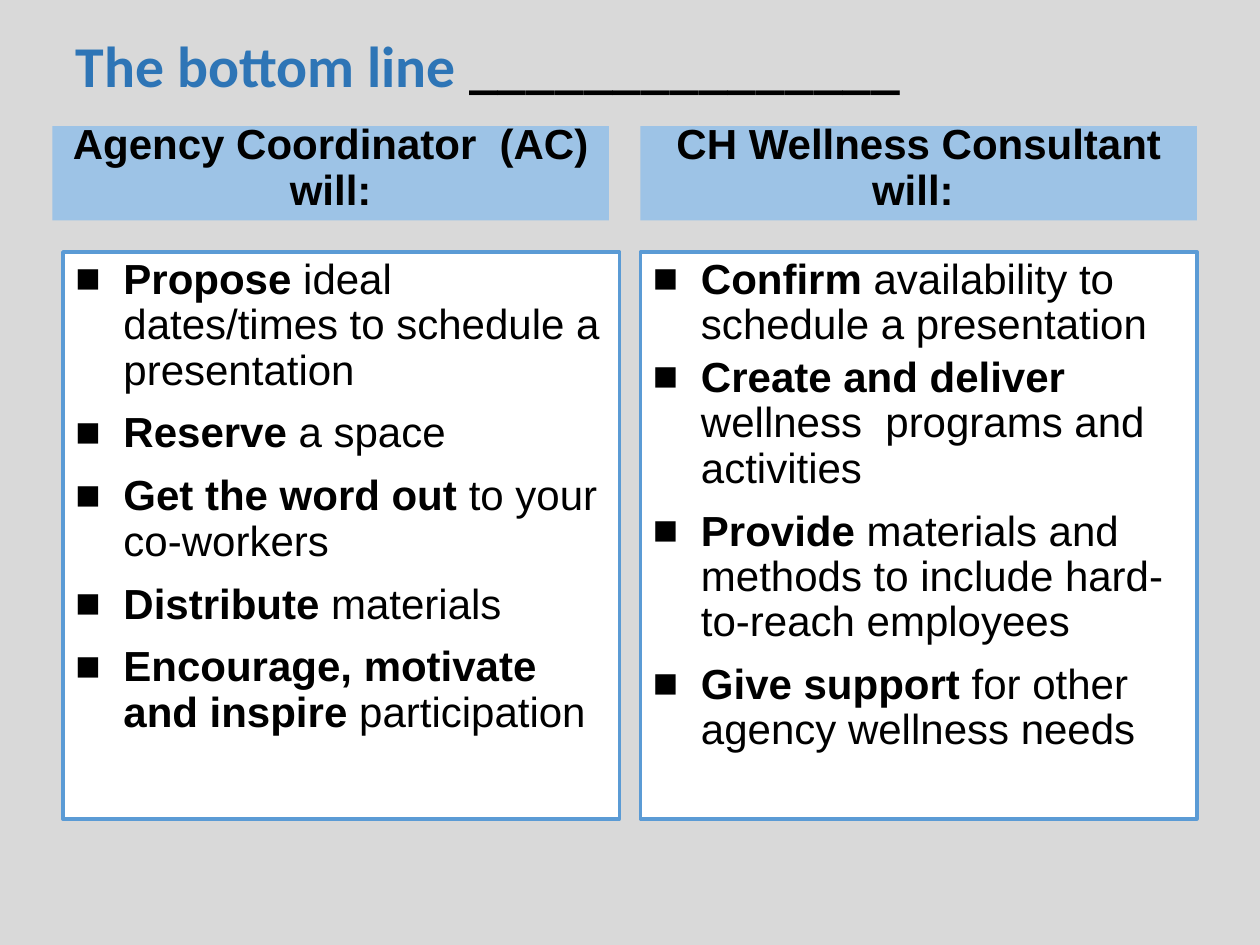
import pptx
import pptx.dml.color
import pptx.enum.shapes
import pptx.enum.text
import pptx.oxml
import pptx.oxml.ns
import pptx.util

Pt = pptx.util.Pt
RGBColor = pptx.dml.color.RGBColor
ALIGN = pptx.enum.text.PP_ALIGN
ANCHOR = pptx.enum.text.MSO_ANCHOR

GREY = RGBColor(0xD9, 0xD9, 0xD9)
BLACK = RGBColor(0, 0, 0)
WHITE = RGBColor(0xFF, 0xFF, 0xFF)
TITLE_BLUE = RGBColor(0x2E, 0x75, 0xB6)
HEADER_BLUE = RGBColor(0x9D, 0xC3, 0xE6)
BORDER_BLUE = RGBColor(0x5B, 0x9B, 0xD5)

COLUMN_WIDTH = 318
BULLET_INDENT = 27.5

# Each bullet: bold lead, plain remainder, space before in points.
COLUMNS = [
    {
        "header": "Agency Coordinator  (AC) will:",
        "header_left": 30,
        "list_left": 36,
        "bullets": [
            ("Propose ", "ideal dates/times to schedule a presentation", 0),
            ("Reserve", " a space", 10),
            ("Get the word out", " to your co-workers", 10),
            ("Distribute", " materials", 10),
            ("Encourage, motivate and inspire ", "participation", 10),
        ],
    },
    {
        "header": "CH Wellness Consultant will: ",
        "header_left": 366,
        "list_left": 366,
        "bullets": [
            ("Confirm ", "availability to schedule a presentation", 4.2),
            ("Create and deliver ", "wellness  programs and activities", 4.2),
            ("Provide ", "materials and methods to include hard-to-reach employees", 10),
            ("Give support ", "for other agency wellness needs", 10),
        ],
    },
]


def add_text(para, text, size=24, font="Arial", color=BLACK, bold=False):
    span = para.add_run()
    span.text = text
    span.font.size = Pt(size)
    span.font.name = font
    span.font.color.rgb = color
    span.font.bold = bold


def format_frame(frame, anchor):
    frame.word_wrap = True
    frame.auto_size = pptx.enum.text.MSO_AUTO_SIZE.NONE
    frame.vertical_anchor = anchor
    frame.margin_left = frame.margin_right = Pt(7.2)
    frame.margin_top = frame.margin_bottom = Pt(3.6)


def format_paragraph(para, align=ALIGN.LEFT, space_before=0):
    para.alignment = align
    para.line_spacing = 0.9
    para.space_before = Pt(space_before)


def add_bullet(para):
    properties = para._p.get_or_add_pPr()
    properties.set("marL", str(Pt(BULLET_INDENT)))
    properties.set("indent", str(-Pt(BULLET_INDENT)))
    namespace = pptx.oxml.ns.nsdecls("a")
    for markup in ('<a:buFont {} typeface="Arial"/>', '<a:buChar {} char="■"/>'):
        properties.append(pptx.oxml.parse_xml(markup.format(namespace)))


def add_box(page, left, top, height, fill, anchor, border=None):
    box = page.shapes.add_shape(
        pptx.enum.shapes.MSO_SHAPE.RECTANGLE,
        Pt(left), Pt(top), Pt(COLUMN_WIDTH), Pt(height))
    box.shadow.inherit = False
    box.fill.solid()
    box.fill.fore_color.rgb = fill
    if border is None:
        box.line.fill.background()
    else:
        box.line.color.rgb = border
        box.line.width = Pt(2)
    format_frame(box.text_frame, anchor)
    return box


def add_title(page):
    title = page.shapes.title
    title.left, title.top, title.width, title.height = Pt(36), Pt(18), Pt(648), Pt(72)
    format_frame(title.text_frame, ANCHOR.TOP)
    para = title.text_frame.paragraphs[0]
    format_paragraph(para)
    add_text(para, "The bottom line ", size=33, font="Calibri", color=TITLE_BLUE, bold=True)
    add_text(para, "_" * 15, size=33, font="Calibri", bold=True)


def add_header(page, left, text):
    box = add_box(page, left, 72, 54, HEADER_BLUE, ANCHOR.BOTTOM)
    para = box.text_frame.paragraphs[0]
    format_paragraph(para, align=ALIGN.CENTER)
    add_text(para, text, bold=True)


def add_bullet_list(page, left, bullets):
    box = add_box(page, left, 144, 324, WHITE, ANCHOR.TOP, border=BORDER_BLUE)
    frame = box.text_frame
    for index, (lead, remainder, space_before) in enumerate(bullets):
        para = frame.add_paragraph() if index else frame.paragraphs[0]
        format_paragraph(para, space_before=space_before)
        add_bullet(para)
        add_text(para, lead, bold=True)
        add_text(para, remainder)


def main():
    deck = pptx.Presentation()
    deck.slide_width, deck.slide_height = Pt(720), Pt(540)
    page = deck.slides.add_slide(deck.slide_layouts.get_by_name("Title Only"))
    page.background.fill.solid()
    page.background.fill.fore_color.rgb = GREY
    add_title(page)
    for column in COLUMNS:
        add_header(page, column["header_left"], column["header"])
        add_bullet_list(page, column["list_left"], column["bullets"])
    deck.save("out.pptx")


if __name__ == "__main__":
    main()
